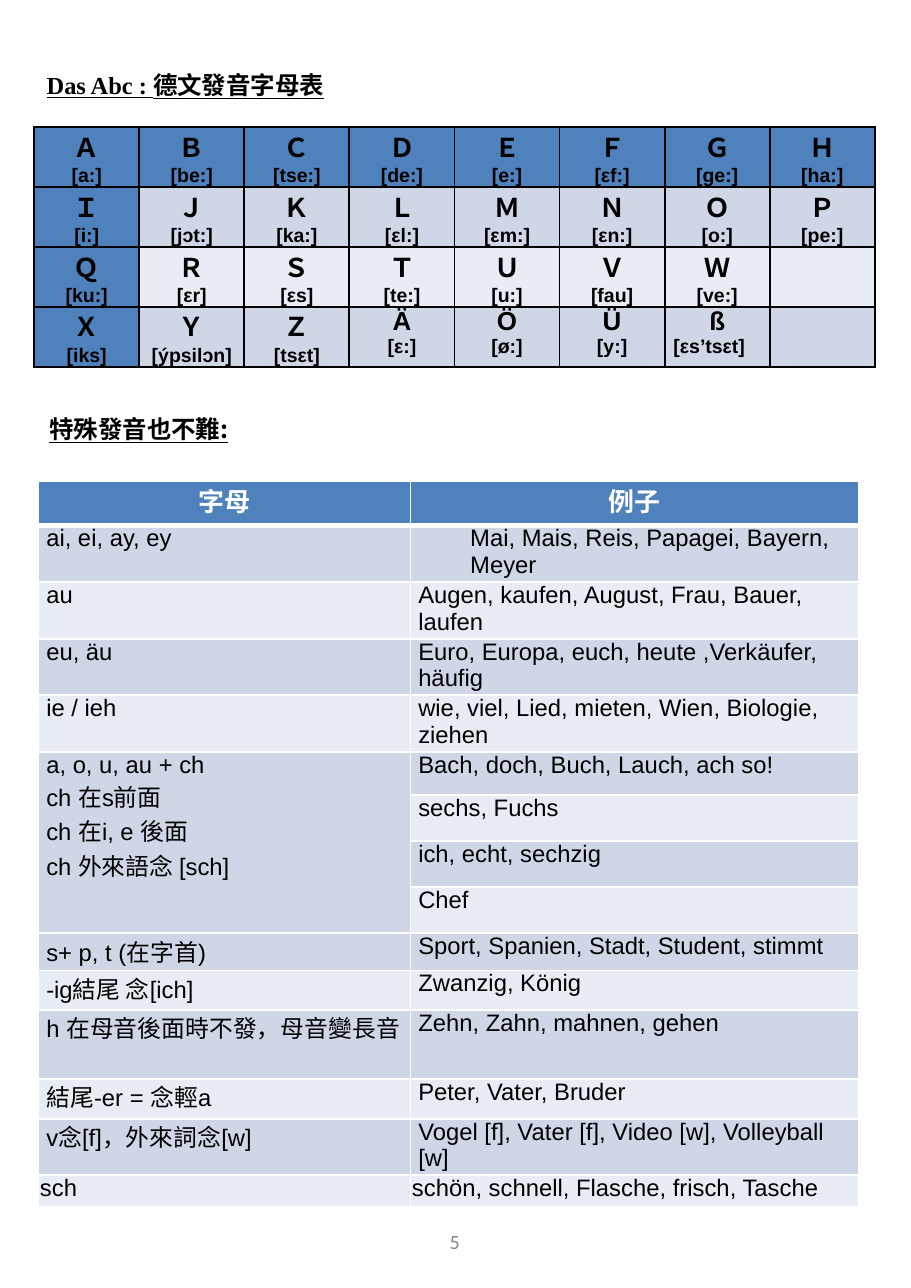
from lxml.etree import SubElement
from pptx import Presentation
from pptx.dml.color import RGBColor
from pptx.enum.text import MSO_ANCHOR, PP_ALIGN
from pptx.oxml import parse_xml
from pptx.oxml.ns import nsdecls, qn
from pptx.util import Pt

COLORS = {"blue": "4F81BD", "dark_band": "CFD7E7", "light_band": "E8ECF4",
          "black": "000000", "white": "FFFFFF", "grey": "888888"}
BANDS = ["light_band", "dark_band"]
CJK = "Noto Sans CJK TC"


def add_run(p, text, size, font="Arial", color="black", bold=False, underline=False):
    r = p.add_run()
    r.text = text
    f = r.font
    f.size, f.name, f.bold, f.underline = Pt(size), font, bold, underline
    f.color.rgb = RGBColor.from_string(COLORS[color])
    SubElement(r._r.get_or_add_rPr(), qn("a:ea")).set("typeface", CJK)


def style_cell(cell, fill, border, inset, bottom=1):
    """Set fill, side margins and the four borders; bottom is a width in points."""
    cell.fill.solid()
    cell.fill.fore_color.rgb = RGBColor.from_string(COLORS[fill])
    cell.margin_left = cell.margin_right = Pt(inset)
    cell.margin_top = cell.margin_bottom = 0
    tcPr = cell._tc.get_or_add_tcPr()
    for i, (side, width) in enumerate([("L", 1), ("R", 1), ("T", 1), ("B", bottom)]):
        tcPr.insert(i, parse_xml(
            f'<a:ln{side} {nsdecls("a")} w="{Pt(width)}"><a:solidFill>'
            f'<a:srgbClr val="{COLORS[border]}"/></a:solidFill></a:ln{side}>'))


prs = Presentation()
prs.slide_width, prs.slide_height = Pt(421.2), Pt(595.44)
s = prs.slides.add_slide(prs.slide_layouts[6])

# Alphabet table
ALPHABET = [
    "Ａ[a:] Ｂ[be:] Ｃ[tse:] Ｄ[de:] Ｅ[e:] Ｆ[εf:] Ｇ[ge:] Ｈ[ha:]",
    "Ｉ[i:] Ｊ[jɔt:] Ｋ[ka:] Ｌ[εl:] Ｍ[εm:] Ｎ[εn:] Ｏ[o:] Ｐ[pe:]",
    "Ｑ[ku:] Ｒ[εr] Ｓ[εs] Ｔ[te:] Ｕ[u:] Ｖ[fau] Ｗ[ve:]",
    "Ｘ[iks] Ｙ[ýpsilɔn] Ｚ[tsεt] Ä[ε:] Ö[ø:] Ü[y:] ß[εs’tsεt]",
]
COL_WIDTH, ROW_HEIGHT = 48.6, 27.7
alphabet = s.shapes.add_table(4, 8, Pt(15.8), Pt(58.8),
                              Pt(8 * COL_WIDTH), Pt(4 * ROW_HEIGHT)).table
for col in alphabet.columns:
    col.width = Pt(COL_WIDTH)
for i, line in enumerate(ALPHABET):
    alphabet.rows[i].height = Pt(ROW_HEIGHT)
    for j in range(8):
        fill = "blue" if i == 0 or j == 0 else BANDS[i % 2]
        style_cell(alphabet.cell(i, j), fill, "black", 4.1)
    for j, entry in enumerate(line.split()):
        tf = alphabet.cell(i, j).text_frame
        letter, sound = entry[0], entry[1:]
        p = tf.paragraphs[0]
        p.alignment = PP_ALIGN.CENTER
        add_run(p, letter, 12, bold=True)
        p = tf.add_paragraph()
        p.alignment = PP_ALIGN.LEFT if letter == "ß" else PP_ALIGN.CENTER
        add_run(p, sound, 9, bold=True)

# Table of special sounds: row height, letters, examples
SOUNDS = [
    (20.3, "字母", "例子"),
    (26.2, "ai, ei, ay, ey", "Mai, Mais, Reis, Papagei, Bayern, Meyer"),
    (26.2, "au", "Augen, kaufen, August, Frau, Bauer, laufen"),
    (26.2, "eu, äu", "Euro, Europa, euch, heute ,Verkäufer, häufig"),
    (26.2, "ie / ieh", "wie, viel, Lied, mieten, Wien, Biologie, ziehen"),
    (19.7, "a, o, u, au + ch\nch 在s前面\nch 在i, e 後面\nch 外來語念 [sch]",
     "Bach, doch, Buch, Lauch, ach so!"),
    (21.4, "", "sechs, Fuchs"),
    (21.4, "", "ich, echt, sechzig"),
    (21.4, "", "Chef"),
    (17.2, "s+ p, t (在字首)", "Sport, Spanien, Stadt, Student, stimmt"),
    (18.3, "-ig結尾 念[ich]", "Zwanzig, König"),
    (18.3, "h 在母音後面時不發，母音變長音", "Zehn, Zahn, mahnen, gehen"),
    (18.3, "結尾-er = 念輕a", "Peter, Vater, Bruder"),
    (26.2, "v念[f]，外來詞念[w]", "Vogel [f], Vater [f], Video [w], Volleyball [w]"),
    (14.4, "sch", "schön, schnell, Flasche, frisch, Tasche"),
]
LETTERS_WIDTH, EXAMPLES_WIDTH = 172, 207.2
sounds = s.shapes.add_table(len(SOUNDS), 2, Pt(17.8), Pt(222.6),
                            Pt(LETTERS_WIDTH + EXAMPLES_WIDTH),
                            Pt(sum(row[0] for row in SOUNDS))).table
sounds.columns[0].width = Pt(LETTERS_WIDTH)
sounds.columns[1].width = Pt(EXAMPLES_WIDTH)
sounds.cell(5, 0).merge(sounds.cell(8, 0))
for i, (height, *texts) in enumerate(SOUNDS):
    sounds.rows[i].height = Pt(height)
    header = i == 0
    for j, text in enumerate(texts):
        cell = sounds.cell(i, j)
        style_cell(cell, "blue" if header else BANDS[i % 2], "white",
                   0.7 if i == len(SOUNDS) - 1 else 3.6, 3 if header else 1)
        if not text:
            continue
        tf = cell.text_frame
        for k, line in enumerate(text.split("\n")):
            p = tf.add_paragraph() if k else tf.paragraphs[0]
            if header:
                p.alignment = PP_ALIGN.CENTER
                add_run(p, line, 12, color="white", bold=True)
            else:
                add_run(p, line, 11)
sounds.cell(1, 1).text_frame.paragraphs[0]._p.get_or_add_pPr().set("marL", str(Pt(24)))

# Headings and page number: box, side and top insets, anchor, alignment, runs
TEXTS = [
    ((15.8, 29.5, 141.8, 41.8), (5.8, 2.9), MSO_ANCHOR.TOP, PP_ALIGN.LEFT,
     [("Das Abc : ", 11.3, "Times New Roman", "black", True, True),
      ("德文發音字母表", 11.3, CJK, "black", True, True)]),
    ((15.8, 187.9, 97.9, 20.9), (7.2, 3.6), MSO_ANCHOR.TOP, PP_ALIGN.LEFT,
     [("特殊發音也不難:", 11.3, CJK, "black", True, True)]),
    ((161.3, 558, 97.9, 31.7), (7.2, 3.6), MSO_ANCHOR.MIDDLE, PP_ALIGN.CENTER,
     [("5", 9.3, "Calibri", "grey")]),
]
for box, (side, top), anchor, alignment, runs in TEXTS:
    tf = s.shapes.add_textbox(*map(Pt, box)).text_frame
    tf.word_wrap = True
    tf.vertical_anchor = anchor
    tf.margin_left = tf.margin_right = Pt(side)
    tf.margin_top = tf.margin_bottom = Pt(top)
    p = tf.paragraphs[0]
    p.alignment = alignment
    for run in runs:
        add_run(p, *run)

prs.save("out.pptx")
